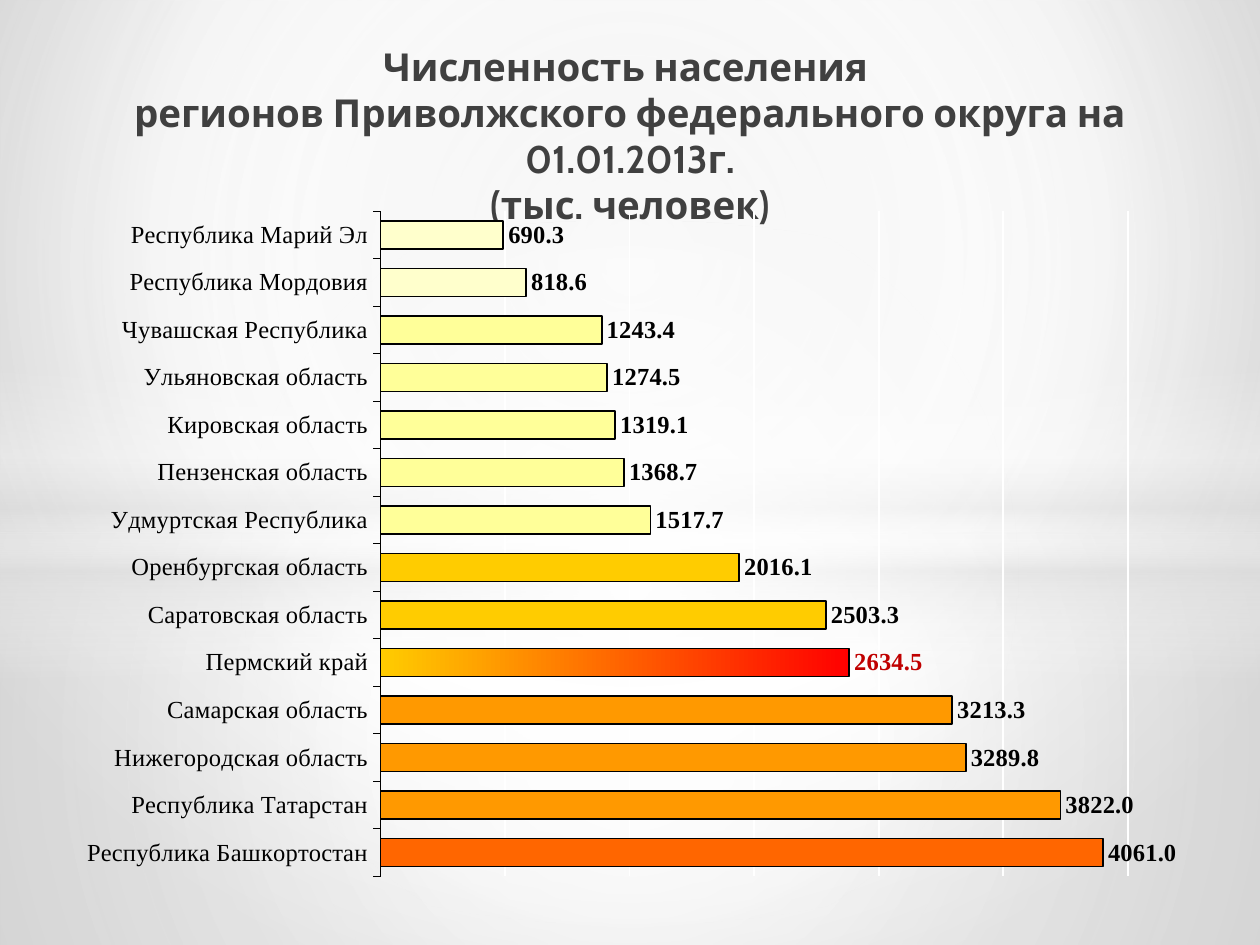
from lxml.etree import SubElement
from pptx import Presentation
from pptx.chart.data import CategoryChartData
from pptx.dml.color import RGBColor
from pptx.enum.chart import XL_CHART_TYPE as ChartType, XL_LABEL_POSITION as LabelPosition
from pptx.enum.chart import XL_TICK_LABEL_POSITION as TickLabels, XL_TICK_MARK as TickMark
from pptx.enum.shapes import MSO_SHAPE as Shape
from pptx.enum.text import MSO_ANCHOR as Anchor, PP_ALIGN as Align
from pptx.oxml import parse_xml
from pptx.oxml.ns import nsdecls, qn
from pptx.util import Inches, Pt

WIDTH, HEIGHT = 10, 7.5
TITLE_FONT, CHART_FONT = "Cabin", "Times New Roman"
TITLE_LINES = [
    "Численность населения ",
    "регионов Приволжского федерального округа на 01.01.2013г.",
    "(тыс. человек)",
]
HOT = {"stops": [(0, "FFCC00", 100), (100, "FF0000", 100)], "angle": 0}
REGIONS = [
    ("Республика Башкортостан", 4061.0, "FF6600"),
    ("Республика Татарстан", 3822.0, "FF9900"),
    ("Нижегородская область", 3289.8, "FF9900"),
    ("Самарская область", 3213.3, "FF9900"),
    ("Пермский край", 2634.5, HOT),
    ("Саратовская область", 2503.3, "FFCC00"),
    ("Оренбургская область", 2016.1, "FFCC00"),
    ("Удмуртская Республика", 1517.7, "FFFF99"),
    ("Пензенская область", 1368.7, "FFFF99"),
    ("Кировская область", 1319.1, "FFFF99"),
    ("Ульяновская область", 1274.5, "FFFF99"),
    ("Чувашская Республика", 1243.4, "FFFF99"),
    ("Республика Мордовия", 818.6, "FFFFCC"),
    ("Республика Марий Эл", 690.3, "FFFFCC"),
]
PLOT = {"x": 0.285, "y": 0.023, "w": 0.633, "h": 0.958}
CENTRE = (50, 50, 50, 50)
BACKDROP = {"stops": [(0, "D5D5D5", 100), (60, "FFFFFF", 100), (100, "B2B2B2", 100)],
            "focus": (20, 10, 20, 60)}
HORIZON = 4.23
LIGHTS = [
    (Shape.RECTANGLE, (0, HORIZON, WIDTH, HEIGHT - HORIZON),
     {"stops": [(0, "FFFFFF", 91), (37, "FFFFFF", 76), (100, "DEDEDE", 79)], "focus": CENTRE}),
    (Shape.RECTANGLE, (0, 0, WIDTH, HORIZON),
     {"stops": [(0, "FFFFFF", 89), (48, "FFFFFF", 62), (100, "DEDEDE", 79)], "focus": CENTRE}),
    (Shape.RECTANGLE, (0, 2.9, WIDTH, 2.5),
     {"stops": [(0, "FFFFFF", 0), (29, "FFFFFF", 30), (45, "DEDEDE", 40),
                (55, "FFFFFF", 26), (65, "DEDEDE", 60), (100, "FFFFFF", 0)], "angle": 90}),
    (Shape.OVAL, (0, 1.75, WIDTH, 5.58),
     {"stops": [(0, "FFFFFF", 100), (54, "FFFFFF", 0)], "focus": CENTRE}),
]


def color(value):
    return RGBColor.from_string(value)


def box(lengths):
    return [Inches(length) for length in lengths]


def paint(fill, owner, paint_value):
    fill.solid()
    if isinstance(paint_value, str):
        fill.fore_color.rgb = color(paint_value)
        return
    gradient = parse_xml(f'<a:gradFill {nsdecls("a")} rotWithShape="1"><a:gsLst/></a:gradFill>')
    for position, value, opacity in paint_value["stops"]:
        stop = SubElement(gradient[0], qn("a:gs"), pos=str(position * 1000))
        tone = SubElement(stop, qn("a:srgbClr"), val=value)
        if opacity < 100:
            SubElement(tone, qn("a:alpha"), val=str(opacity * 1000))
    if "focus" in paint_value:
        route = SubElement(gradient, qn("a:path"), path="circle")
        sides = {side: str(share * 1000) for side, share in zip("ltrb", paint_value["focus"])}
        SubElement(route, qn("a:fillToRect"), **sides)
    else:
        SubElement(gradient, qn("a:lin"), ang=str(paint_value["angle"] * 60000), scaled="0")
    solid = next(owner.iter(qn("a:solidFill")))
    solid.getparent().replace(solid, gradient)


def set_font(font, size, value, bold, name):
    font.size, font.bold, font.name = Pt(size), bold, name
    font.color.rgb = color(value)


def set_line(line, value, width):
    line.color.rgb = color(value)
    line.width = Pt(width)


def add_backdrop(slide):
    background = slide.background
    paint(background.fill, background._cSld, BACKDROP)
    for kind, place, gradient in LIGHTS:
        shape = slide.shapes.add_shape(kind, *box(place))
        shape.shadow.inherit = False
        paint(shape.fill, shape._element.spPr, gradient)
        shape.line.fill.background()


def add_title(slide):
    frame = slide.shapes.add_textbox(*box((0, 0.29, 9.8, 1.18))).text_frame
    frame.word_wrap = True
    frame.vertical_anchor = Anchor.TOP
    paragraph = frame.paragraphs[0]
    paragraph.alignment = Align.CENTER
    paragraph._p.get_or_add_pPr().set("marL", str(Inches(0.2)))
    for index, line in enumerate(TITLE_LINES):
        if index:
            paragraph.add_line_break()
        run = paragraph.add_run()
        run.text = line
        set_font(run.font, 22, "404040", True, TITLE_FONT)


def add_population_chart(slide):
    data = CategoryChartData(number_format="0.0")
    data.categories = [name for name, _, _ in REGIONS]
    data.add_series("Series 1", [value for _, value, _ in REGIONS])
    place = box((0.35, 1.55, 9.37, 5.51))
    chart = slide.shapes.add_chart(ChartType.BAR_CLUSTERED, *place, data).chart
    chart.has_legend = chart.has_title = False
    set_font(chart.font, 10, "000000", True, CHART_FONT)

    names = chart.category_axis
    names.major_tick_mark = TickMark.OUTSIDE
    names.has_major_gridlines = False
    set_font(names.tick_labels.font, 14, "000000", False, CHART_FONT)
    set_line(names.format.line, "000000", 0.25)

    scale = chart.value_axis
    scale.minimum_scale, scale.maximum_scale, scale.major_unit = 0, 4200, 700
    scale.major_tick_mark = TickMark.OUTSIDE
    scale.tick_label_position = TickLabels.NONE
    scale.format.line.fill.background()
    scale.has_major_gridlines = True
    set_line(scale.major_gridlines.format.line, "FFFFFF", 1)

    plot = chart.plots[0]
    plot.gap_width = 70
    plot.vary_by_categories = False
    series = plot.series[0]
    series.invert_if_negative = False
    labels = series.data_labels
    labels.show_value = True
    labels.position = LabelPosition.OUTSIDE_END
    labels.number_format, labels.number_format_is_linked = "0.0", False
    set_font(labels.font, 14, "000000", True, CHART_FONT)
    for index, (_, _, fill) in enumerate(REGIONS):
        point = series.points[index]
        paint(point.format.fill, point.format._element, fill)
        set_line(point.format.line, "000000", 1)
        if fill is HOT:
            set_font(point.data_label.font, 14, "C00000", True, CHART_FONT)
            point.data_label.position = LabelPosition.OUTSIDE_END

    area = chart._chartSpace.chart.plotArea
    for layout in area.findall(qn("c:layout")):
        area.remove(layout)
    layout = parse_xml(f'<c:layout {nsdecls("c")}><c:manualLayout/></c:layout>')
    modes = {"layoutTarget": "inner", "xMode": "edge", "yMode": "edge"}
    for tag, value in {**modes, **PLOT}.items():
        SubElement(layout[0], qn(f"c:{tag}"), val=str(value))
    area.insert(0, layout)


def main():
    presentation = Presentation()
    presentation.slide_width, presentation.slide_height = box((WIDTH, HEIGHT))
    slide = presentation.slides.add_slide(presentation.slide_layouts[6])
    add_backdrop(slide)
    add_title(slide)
    add_population_chart(slide)
    presentation.save("out.pptx")


if __name__ == "__main__":
    main()
